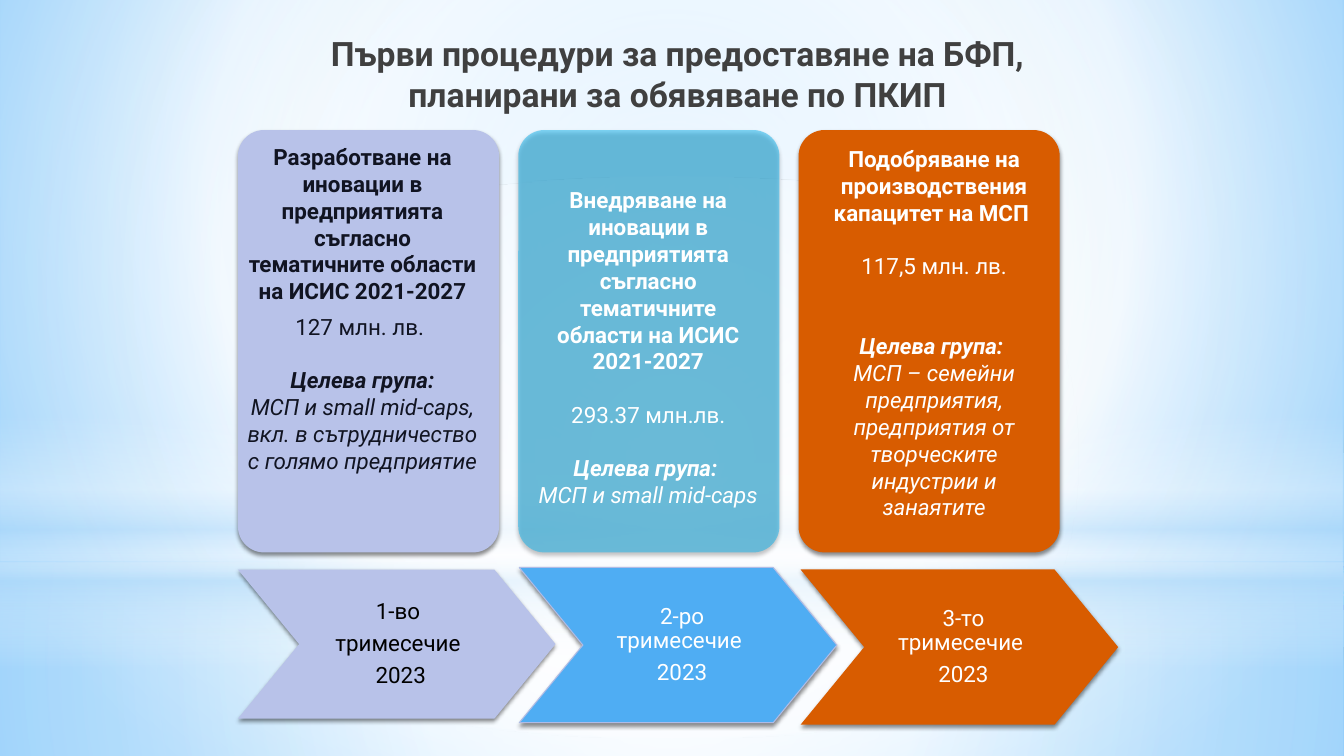
from lxml.etree import SubElement
from pptx import Presentation
from pptx.dml.color import RGBColor
from pptx.enum.shapes import MSO_SHAPE
from pptx.enum.text import MSO_ANCHOR, MSO_AUTO_SIZE, PP_ALIGN
from pptx.oxml.ns import qn
from pptx.util import Inches, Pt

WIDTH, HEIGHT = 13.33, 7.5
COLUMN_LEFT, COLUMN_STEP = 2.36, 2.78
CARD_TOP, CARD_WIDTH, CARD_HEIGHT = 1.29, 2.59, 4.19
LINE = 19
CENTRE = (50, 50, 50, 50)
TEXT_FORMAT = {"name": "Roboto", "size": Pt(16)}
BOLD, PLAIN = {"bold": True}, {}
TARGET, GROUP = {"bold": True, "italic": True}, {"italic": True}

BACKDROP = [
    (MSO_SHAPE.RECTANGLE, 5.58, 1.92,
     [(0, "FFFFFF", 91), (37, "FFFFFF", 76), (100, "B4DCFA", 79)], CENTRE),
    (MSO_SHAPE.RECTANGLE, 0, 5.58,
     [(0, "FFFFFF", 89), (48, "FFFFFF", 62), (100, "B4DCFA", 79)], CENTRE),
    (MSO_SHAPE.RECTANGLE, 4.12, 2.5,
     [(0, "FFFFFF", 0), (29, "FFFFFF", 30), (45, "B4DCFA", 40),
      (55, "FFFFFF", 26), (65, "B4DCFA", 60), (100, "FFFFFF", 0)], None),
    (MSO_SHAPE.OVAL, 1.75, 5.58, [(0, "FFFFFF", 100), (56, "FFFFFF", 0)], CENTRE),
]

PROCEDURES = [
    {"fill": "B8C2E9", "ink": "111422", "box": (2.35, 1.37, 2.49, 3.95), "text": [
        ("Разработване на иновации в предприятията съгласно "
         "тематичните области на ИСИС 2021-2027", BOLD, 0),
        ("127 млн. лв. ", PLAIN, 6),
        ("Целева група:", TARGET, LINE),
        ("МСП и small mid-caps, вкл. в сътрудничество с голямо предприятие ", GROUP, 0)],
     "arrow": "B8C2E9", "arrow_ink": "000000", "arrow_rows": (5.65, 1.48),
     "quarter": ["1-во ", "тримесечие ", "2023"]},
    {"fill": "12B2EB", "alpha": 50, "ink": "FFFFFF", "box": (5.23, 1.8, 2.4, 3.64), "text": [
        ("Внедряване на иновации в предприятията съгласно "
         "тематичните области на ИСИС 2021-2027", BOLD, 0),
        ("293.37 млн.лв.", PLAIN, LINE),
        ("Целева група: ", TARGET, LINE),
        ("МСП и small mid-caps", GROUP, 0)],
     "arrow": "4FADF3", "arrow_ink": "FFFFFF", "arrow_rows": (5.63, 1.54),
     "outline": "AFBBE6", "quarter": ["2-ро тримесечие ", "2023"]},
    {"fill": "D85C00", "ink": "FFFFFF", "box": (8.02, 1.39, 2.49, 4.44), "text": [
        ("Подобряване на производствения капацитет на МСП ", BOLD, 0),
        ("117,5 млн. лв.", PLAIN, LINE),
        ("Целева група: ", TARGET, 2 * LINE),
        ("МСП – семейни предприятия, предприятия от творческите "
         "индустрии и занаятите", GROUP, 0)],
     "arrow": "D85C00", "arrow_ink": "FFFFFF", "arrow_rows": (5.65, 1.54),
     "quarter": ["3-то тримесечие ", "2023"]},
]


def colour(value):
    """Turn a hex string into a colour."""
    return RGBColor.from_string(value)


def add_colour(parent, value, alpha):
    """Append a colour with an opacity in percent."""
    tint = SubElement(parent, qn("a:srgbClr"), val=value)
    if alpha < 100:
        SubElement(tint, qn("a:alpha"), val=str(alpha * 1000))


def paint_gradient(fill, element, stops, centre):
    """Fill with a radial gradient, or a vertical one without a centre."""
    fill.gradient()
    gradient = next(element.iter(qn("a:gradFill")))
    for child in list(gradient):
        gradient.remove(child)
    stop_list = SubElement(gradient, qn("a:gsLst"))
    for position, value, alpha in stops:
        add_colour(SubElement(stop_list, qn("a:gs"), pos=str(position * 1000)), value, alpha)
    if centre:
        circle = SubElement(gradient, qn("a:path"), {"path": "circle"})
        sides = {side: str(share * 1000) for side, share in zip("ltrb", centre)}
        SubElement(circle, qn("a:fillToRect"), sides)
    else:
        SubElement(gradient, qn("a:lin"), ang="5400000", scaled="0")


def add_figure(slide, preset, left, top, width, height):
    """Add a preset shape without line or shadow."""
    figure = slide.shapes.add_shape(
        preset, Inches(left), Inches(top), Inches(width), Inches(height))
    figure.shadow.inherit = False
    figure.line.fill.background()
    return figure


def fill_raised(figure, value, alpha=100):
    """Fill with one colour and cast a soft shadow downwards."""
    figure.fill.solid()
    figure.fill.fore_color.rgb = colour(value)
    if alpha < 100:
        tint = next(figure.fill._xPr.iter(qn("a:srgbClr")))
        SubElement(tint, qn("a:alpha"), val=str(alpha * 1000))
    effects = next(figure._element.iter(qn("a:effectLst")))
    shadow = SubElement(effects, qn("a:outerShdw"), blurRad=str(Pt(3.1)),
                        dist=str(Pt(1.8)), dir="5400000", rotWithShape="0")
    add_colour(shadow, "000000", 45)


def write(frame, lines, ink, base=TEXT_FORMAT, **spacing):
    """Write centred paragraphs of text, format and space before."""
    frame.word_wrap = True
    for number, (text, style, before) in enumerate(lines):
        paragraph = frame.add_paragraph() if number else frame.paragraphs[0]
        layout = {"alignment": PP_ALIGN.CENTER, "space_before": Pt(before), **spacing}
        for name, value in layout.items():
            setattr(paragraph, name, value)
        run = paragraph.add_run()
        run.text = text
        for name, value in {**base, **style}.items():
            setattr(run.font, name, value)
        run.font.color.rgb = colour(ink)


def add_backdrop(slide):
    """Paint the background and the light bands over it."""
    paint_gradient(slide.background.fill, slide._element,
                   [(0, "9ED5FF", 100), (60, "FFFFFF", 100), (100, "5BB9FF", 100)],
                   (20, 10, 20, 60))
    for preset, top, height, stops, centre in BACKDROP:
        band = add_figure(slide, preset, 0, top, WIDTH, height)
        paint_gradient(band.fill, band._element, stops, centre)


def add_title(slide):
    """Place the title in front of the backdrop."""
    title = slide.shapes.title
    slide.shapes._spTree.append(title._element)
    place = {"left": 2.68, "top": 0.28, "width": 8.08, "height": 0.7}
    for name, value in place.items():
        setattr(title, name, Inches(value))
    title.text_frame.auto_size = MSO_AUTO_SIZE.NONE
    title.text_frame.vertical_anchor = MSO_ANCHOR.TOP
    heading = "Първи процедури за предоставяне на БФП, планирани за обявяване по ПКИП"
    write(title.text_frame, [(heading, BOLD, 0)], "404040", {"name": "Roboto", "size": Pt(24)})


def add_card(slide, column, procedure):
    """Add the rounded card of a procedure and its text."""
    card = add_figure(slide, MSO_SHAPE.ROUNDED_RECTANGLE, COLUMN_LEFT + column * COLUMN_STEP,
                      CARD_TOP, CARD_WIDTH, CARD_HEIGHT)
    card.adjustments[0] = 0.1
    fill_raised(card, procedure["fill"], procedure.get("alpha", 100))
    details = slide.shapes.add_textbox(*map(Inches, procedure["box"]))
    write(details.text_frame, procedure["text"], procedure["ink"])


def add_quarter(slide, column, procedure):
    """Add the chevron with the quarter of a procedure."""
    top, height = procedure["arrow_rows"]
    chevron = add_figure(slide, MSO_SHAPE.CHEVRON, COLUMN_LEFT + column * (COLUMN_STEP + 0.01),
                         top, 3.15, height)
    chevron.adjustments[0] = 0.41
    fill_raised(chevron, procedure["arrow"])
    if "outline" in procedure:
        chevron.line.color.rgb = colour(procedure["outline"])
        chevron.line.width = Pt(0.75)
    frame = chevron.text_frame
    margins = {"margin_left": 0.16, "margin_right": 0.08,
               "margin_top": 0.04, "margin_bottom": 0.04}
    for name, value in margins.items():
        setattr(frame, name, Inches(value))
    frame.vertical_anchor = MSO_ANCHOR.MIDDLE
    write(frame, [(text, PLAIN, 0) for text in procedure["quarter"]],
          procedure["arrow_ink"], line_spacing=0.9, space_after=Pt(5.6))


def main():
    """Build the slide and save it."""
    deck = Presentation()
    deck.slide_width, deck.slide_height = Inches(WIDTH), Inches(HEIGHT)
    slide = deck.slides.add_slide(deck.slide_layouts[5])
    add_backdrop(slide)
    add_title(slide)
    for column, procedure in enumerate(PROCEDURES):
        add_card(slide, column, procedure)
        add_quarter(slide, column, procedure)
    deck.save("out.pptx")


if __name__ == "__main__":
    main()
